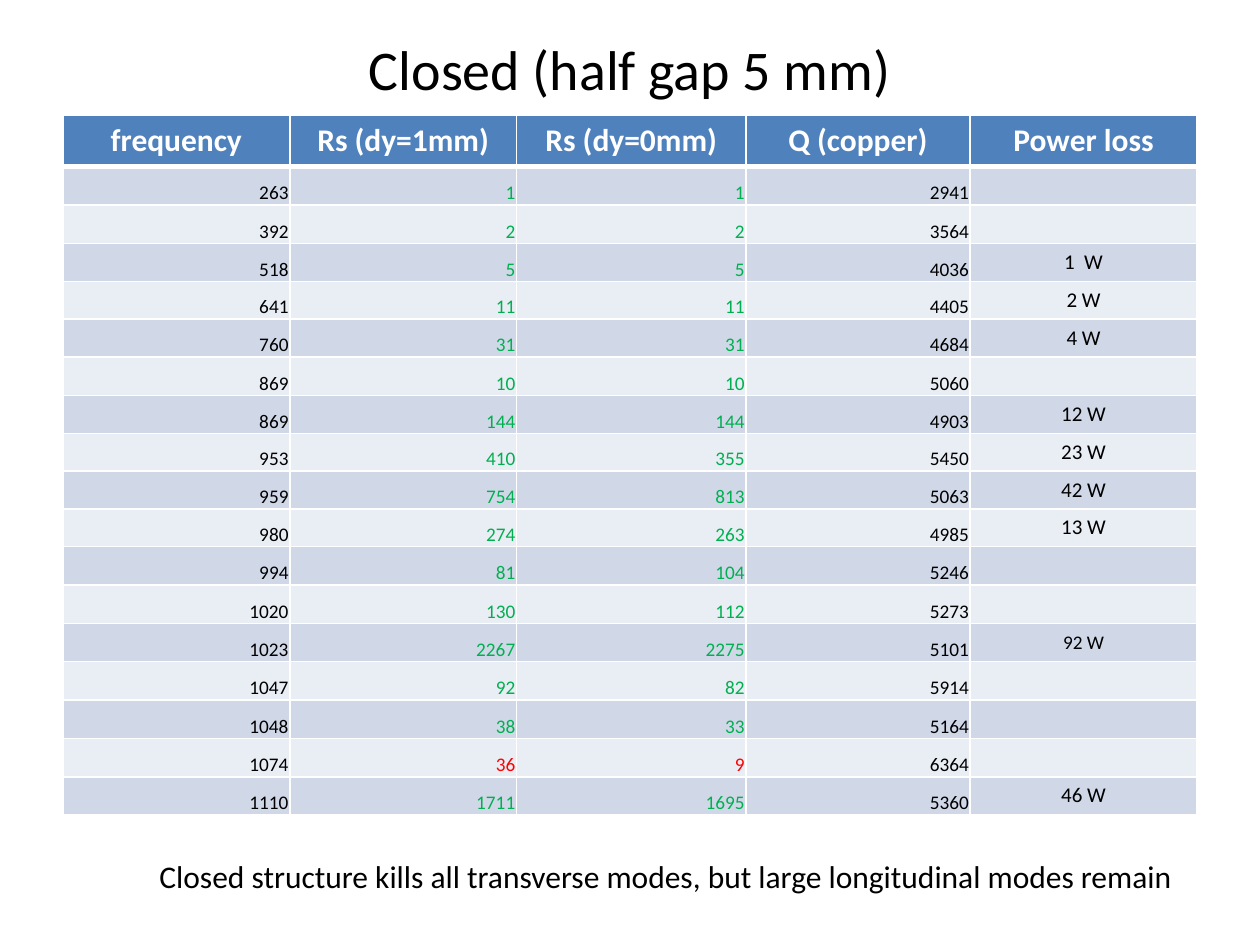
from dataclasses import dataclass
from pptx import Presentation
from pptx.dml.color import RGBColor as Color
from pptx.enum.text import MSO_ANCHOR as Anchor, MSO_AUTO_SIZE as AutoSize, PP_ALIGN as Align
from pptx.oxml import parse_xml
from pptx.oxml.ns import nsdecls
from pptx.util import Pt


@dataclass(frozen=True)
class Theme:
    font: str = "Calibri"
    ink: str = "000000"
    white: str = "FFFFFF"
    header: str = "4F81BD"
    bands: tuple = ("D0D8E8", "E9EDF4")
    good: str = "00B050"
    bad: str = "FF0000"
    title_size: int = 32
    text_size: int = 18
    number_size: int = 11
    power_size: int = 12


THEME = Theme()
HEADERS = ["frequency", "Rs (dy=1mm)", "Rs (dy=0mm)", "Q (copper)", "Power loss"]
MODES = [
    (263, 1, 1, 2941, ""),
    (392, 2, 2, 3564, ""),
    (518, 5, 5, 4036, "1  W"),
    (641, 11, 11, 4405, "2 W"),
    (760, 31, 31, 4684, "4 W"),
    (869, 10, 10, 5060, ""),
    (869, 144, 144, 4903, "12 W"),
    (953, 410, 355, 5450, "23 W"),
    (959, 754, 813, 5063, "42 W"),
    (980, 274, 263, 4985, "13 W"),
    (994, 81, 104, 5246, ""),
    (1020, 130, 112, 5273, ""),
    (1023, 2267, 2275, 5101, "92 W"),
    (1047, 92, 82, 5914, ""),
    (1048, 38, 33, 5164, ""),
    (1074, 36, 9, 6364, ""),
    (1110, 1711, 1695, 5360, "46 W"),
]
BAD_FREQUENCY = 1074
SMALL_POWER = "92 W"
COLUMN_WIDTHS = [129.6, 129.6, 131.04, 128.16, 129.6]
HEADER_HEIGHT, ROW_HEIGHT = 29, 21.6


def apply(target, values):
    for name, value in values.items():
        setattr(target, name, value)


def write(frame, text, size, color, align=Align.LEFT, bold=False):
    para = frame.paragraphs[0]
    para.alignment = align
    if text:
        span = para.add_run()
        span.text = text
        apply(span.font, {"name": THEME.font, "size": Pt(size), "bold": bold})
        span.font.color.rgb = Color.from_string(color)


def place(shape, box):
    apply(shape, dict(zip(("left", "top", "width", "height"), map(Pt, box))))


def style_cell(cell, fill, top=1, bottom=1):
    cell.fill.solid()
    cell.fill.fore_color.rgb = Color.from_string(fill)
    properties = cell._tc.get_or_add_tcPr()
    sides = {"lnL": 1, "lnR": 1, "lnT": top, "lnB": bottom}
    for index, (side, width) in enumerate(sides.items()):
        border = parse_xml(
            f'<a:{side} {nsdecls("a")} w="{Pt(width)}"><a:solidFill>'
            f'<a:srgbClr val="{THEME.white}"/></a:solidFill></a:{side}>')
        properties.insert(index, border)


def add_title(page, box, text):
    title = page.shapes.title
    place(title, box)
    title.text_frame.vertical_anchor = Anchor.MIDDLE
    write(title.text_frame, text, THEME.title_size, THEME.ink, Align.CENTER)


def fill_header(table):
    for cell, label in zip(table.rows[0].cells, HEADERS):
        style_cell(cell, THEME.header, bottom=3)
        cell.vertical_anchor = Anchor.MIDDLE
        write(cell.text_frame, label, THEME.text_size, THEME.white, Align.CENTER, True)


def fill_mode(row, number, mode):
    resistance = THEME.bad if mode[0] == BAD_FREQUENCY else THEME.good
    colors = [THEME.ink, resistance, resistance, THEME.ink]
    *number_cells, power_cell = row.cells
    for cell in row.cells:
        style_cell(cell, THEME.bands[number % 2], top=1 if number else 3)
    for cell, value, color in zip(number_cells, mode, colors):
        apply(cell, {"vertical_anchor": Anchor.BOTTOM, "margin_left": Pt(0.72),
                     "margin_right": Pt(0.72), "margin_top": Pt(0.72), "margin_bottom": 0})
        write(cell.text_frame, str(value), THEME.number_size, color, Align.RIGHT)
    apply(power_cell, {"vertical_anchor": Anchor.MIDDLE, "margin_left": 0,
                       "margin_right": 0, "margin_top": 0, "margin_bottom": 0})
    size = THEME.number_size if mode[-1] == SMALL_POWER else THEME.power_size
    write(power_cell.text_frame, mode[-1], size, THEME.ink, Align.CENTER)


def add_mode_table(page, box):
    table = page.shapes.add_table(len(MODES) + 1, len(HEADERS), *map(Pt, box)).table
    for column, width in zip(table.columns, COLUMN_WIDTHS):
        column.width = Pt(width)
    for row in table.rows:
        row.height = Pt(ROW_HEIGHT)
    table.rows[0].height = Pt(HEADER_HEIGHT)
    fill_header(table)
    for number, mode in enumerate(MODES):
        fill_mode(table.rows[number + 1], number, mode)


def add_conclusion(page, box, text):
    frame = page.shapes.add_textbox(*map(Pt, box)).text_frame
    apply(frame, {"word_wrap": False, "auto_size": AutoSize.SHAPE_TO_FIT_TEXT})
    write(frame, text, THEME.text_size, THEME.ink)


def main():
    deck = Presentation()
    apply(deck, {"slide_width": Pt(720), "slide_height": Pt(540)})
    page = deck.slides.add_slide(deck.slide_layouts[5])
    add_title(page, (36, -6, 648, 90), "Closed (half gap 5 mm)")
    add_mode_table(page, (36, 66, 648, 396))
    add_conclusion(page, (84, 486, 600, 29),
                   "Closed structure kills all transverse modes, but large longitudinal modes remain")
    deck.save("out.pptx")


if __name__ == "__main__":
    main()
